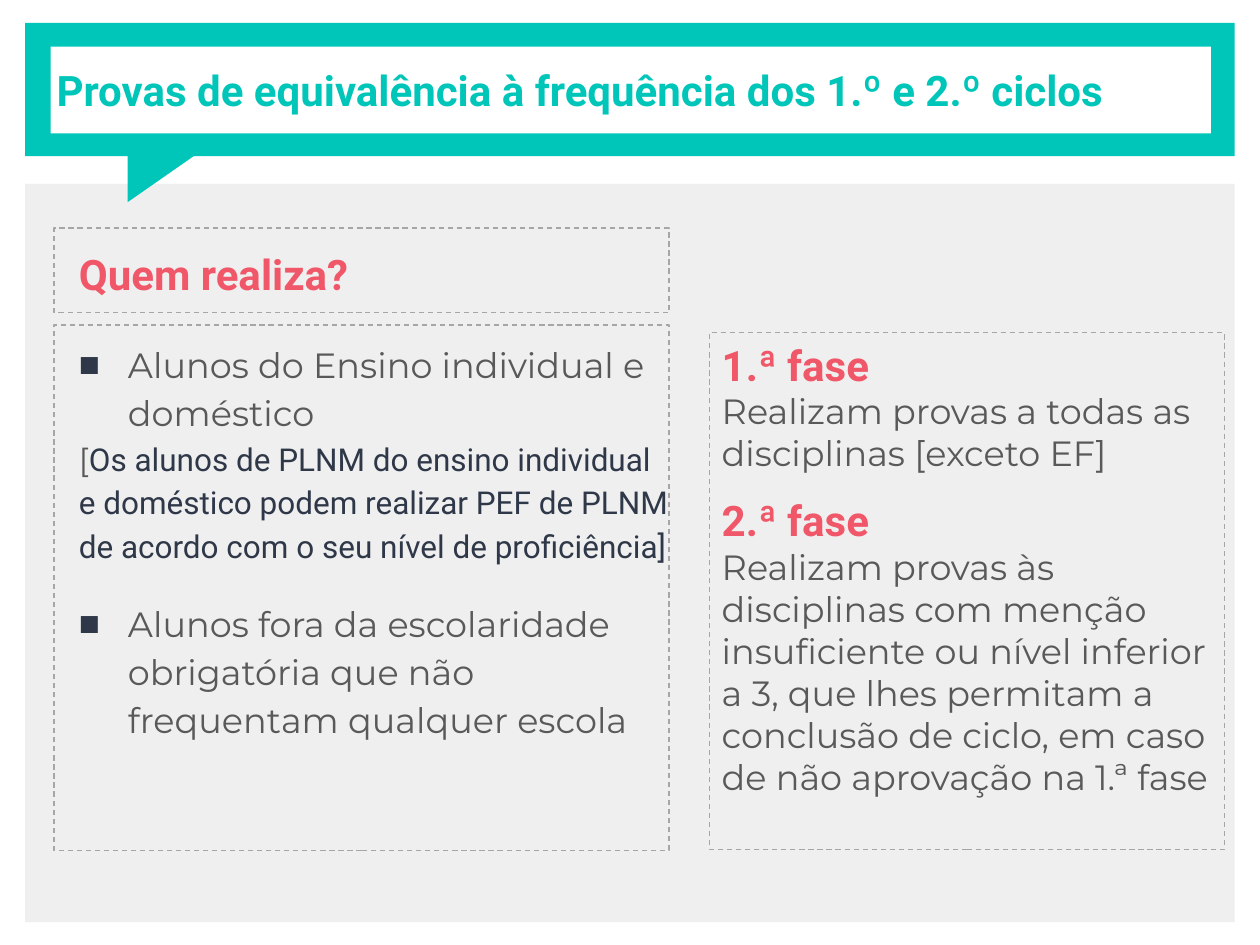
from lxml import etree
from pptx import Presentation
from pptx.dml.color import RGBColor
from pptx.enum.dml import MSO_LINE
from pptx.enum.shapes import MSO_SHAPE
from pptx.enum.text import MSO_ANCHOR, MSO_AUTO_SIZE, PP_ALIGN
from pptx.oxml.ns import qn
from pptx.util import Cm, Pt

RECT, TRIANGLE = MSO_SHAPE.RECTANGLE, MSO_SHAPE.RIGHT_TRIANGLE
DASH = MSO_LINE.DASH
TOP, MIDDLE = MSO_ANCHOR.TOP, MSO_ANCHOR.MIDDLE
NO_FIT = MSO_AUTO_SIZE.NONE
LEFT = PP_ALIGN.LEFT

COLORS = {
    "teal": "00C5B9", "panel": "EFEFEF", "white": "FFFFFF", "coral": "F05768",
    "grey": "595959", "navy": "2F3848", "border": "A6A6A6",
}
COLORS = {name: RGBColor.from_string(value) for name, value in COLORS.items()}


def format_paragraph(paragraph, size, face, color, bold=False, before=0, after=0, spacing=1.0):
    font = paragraph.font
    font.size, font.name, font.bold = Pt(size), face, bold
    font.color.rgb = COLORS[color]
    paragraph.alignment = LEFT
    paragraph.line_spacing = spacing
    paragraph.space_before, paragraph.space_after = Pt(before), Pt(after)


def set_indent(paragraph, left, hanging=0, bullet=None):
    """Set the indent in cm, with a navy bullet or none."""
    props = paragraph._p.get_or_add_pPr()
    props.set("marL", str(Cm(left)))
    props.set("indent", str(Cm(-hanging)))
    if bullet:
        bullet_color = etree.SubElement(props, qn("a:buClr"))
        etree.SubElement(bullet_color, qn("a:srgbClr"), val=str(COLORS["navy"]))
        etree.SubElement(props, qn("a:buFont"), typeface="Arial")
        etree.SubElement(props, qn("a:buChar"), char=bullet)
    else:
        etree.SubElement(props, qn("a:buNone"))


prs = Presentation()
prs.slide_width, prs.slide_height = Cm(25.4), Cm(19.05)
slide = prs.slides.add_slide(prs.slide_layouts[1])
shapes = slide.shapes

# Grey panel and speech-bubble banner
backdrop = [
    (RECT, 0.51, 3.71, 24.38, 14.88, "panel", 0),
    (RECT, 0.51, 0.46, 24.38, 2.69, "teal", 0),
    (TRIANGLE, 2.84, 2.59, 1.22, 1.75, "teal", 90),
    (RECT, 1.02, 0.94, 23.39, 1.75, "white", 0),
]
for kind, left, top, width, height, color, rotation in backdrop:
    block = shapes.add_shape(kind, Cm(left), Cm(top), Cm(width), Cm(height))
    block.rotation = rotation
    block.shadow.inherit = False
    block.fill.solid()
    block.fill.fore_color.rgb = COLORS[color]
    block.line.fill.background()

# Placeholders go in front of the backdrop
title, students = shapes.title, slide.placeholders[1]
for placeholder in (title, students):
    shapes._spTree.append(placeholder._element)
question = shapes.add_textbox(0, 0, 0, 0)
phases = shapes.add_textbox(0, 0, 0, 0)

frames = [
    (title, 0.89, 0.46, 23.5, 2.69, 0.25, 0.25, MIDDLE),
    (question, 1.09, 4.6, 12.4, 1.7, 0.25, 0, TOP),
    (students, 1.09, 6.55, 12.4, 10.59, 0.25, 0, TOP),
    (phases, 14.3, 6.71, 10.39, 10.41, 0.13, 0, TOP),
]
for box, left, top, width, height, inset, inset_right, anchor in frames:
    box.left, box.top, box.width, box.height = Cm(left), Cm(top), Cm(width), Cm(height)
    frame = box.text_frame
    frame.word_wrap = True
    frame.auto_size = NO_FIT
    frame.vertical_anchor = anchor
    frame.margin_left, frame.margin_right = Cm(0.25), Cm(inset_right)
    frame.margin_top = frame.margin_bottom = Cm(inset)
    if box is not title:
        box.line.color.rgb = COLORS["border"]
        box.line.width = Pt(0.75)
        box.line.dash_style = DASH

title.text_frame.text = "Provas de equivalência à frequência dos 1.º e 2.º ciclos"
format_paragraph(title.text_frame.paragraphs[0], 24, "Roboto", "teal", bold=True)

question.text_frame.text = "Quem realiza?"
heading = question.text_frame.paragraphs[0]
format_paragraph(heading, 24, "Roboto", "coral", bold=True, spacing=1.15)
set_indent(heading, 0.25)

# Who sits the exams
students.text_frame.text = "\n".join([
    "Alunos do Ensino individual e doméstico",
    "[",
    "Alunos fora da escolaridade obrigatória que não frequentam qualquer escola",
])
home_taught, note, out_of_school = students.text_frame.paragraphs
for item, after in ((home_taught, 0), (out_of_school, 12)):
    format_paragraph(item, 20, "Montserrat", "grey", before=6, after=after, spacing=1.15)
    set_indent(item, 1.24, hanging=0.99, bullet="■")
format_paragraph(note, 18, "Montserrat", "grey", after=12, spacing=1.15)
set_indent(note, 0.25)
note_text = note.add_run()
note_text.text = ("Os alunos de PLNM do ensino individual e doméstico podem realizar "
                  "PEF de PLNM de acordo com o seu nível de proficiência]")
note_text.font.name = "Roboto"
note_text.font.color.rgb = COLORS["navy"]

# Exam phases
phase_texts = [
    "1.ª fase",
    "Realizam provas a todas as disciplinas [exceto EF]",
    "2.ª fase",
    "Realizam provas às disciplinas com menção insuficiente ou nível inferior a 3, "
    "que lhes permitam a conclusão de ciclo, em caso de não aprovação na 1.ª fase",
]
phases.text_frame.text = "\n".join(phase_texts)
first, first_rule, second, second_rule = phases.text_frame.paragraphs
for phase in (first, second):
    format_paragraph(phase, 24, "Roboto", "coral", bold=True)
for rule, after in ((first_rule, 12), (second_rule, 0)):
    format_paragraph(rule, 20, "Montserrat", "grey", after=after)

prs.save("out.pptx")
